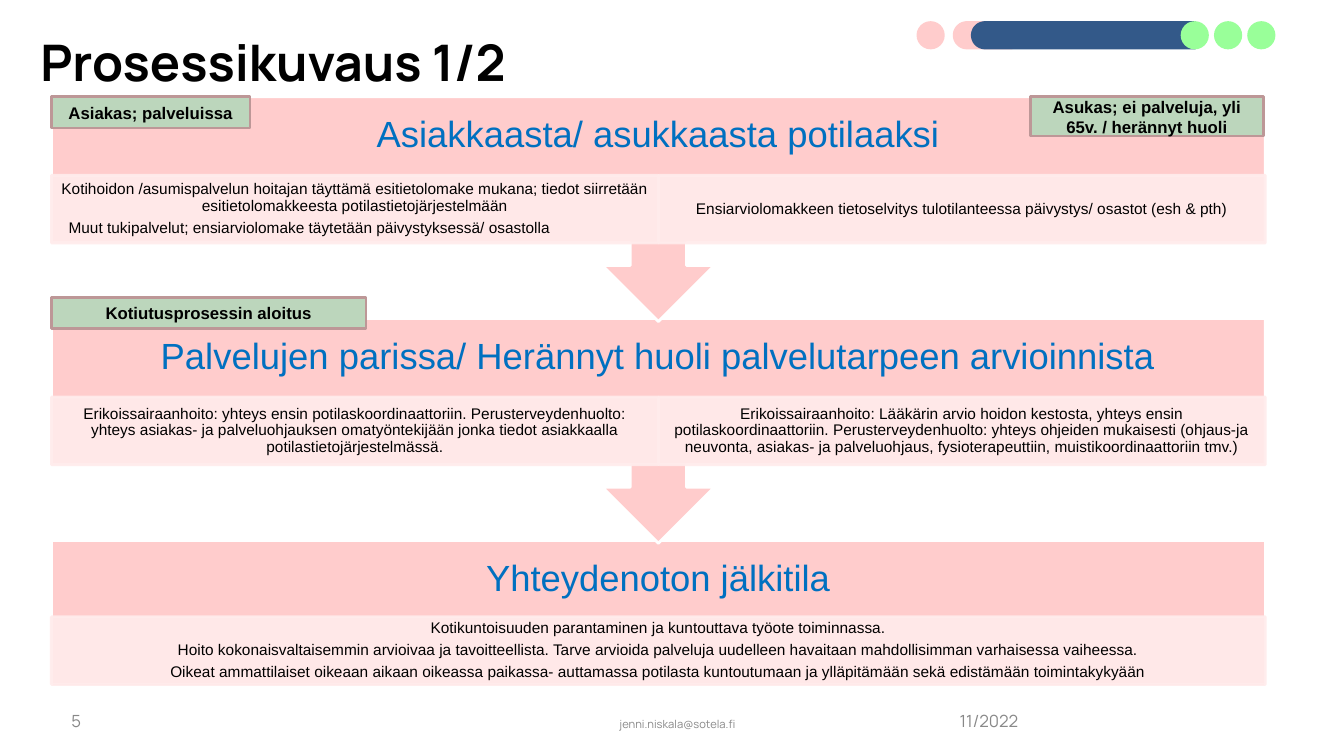
from math import cos, pi, sin

from lxml.etree import SubElement
from pptx import Presentation
from pptx.dml.color import RGBColor
from pptx.enum.shapes import MSO_SHAPE as SHAPE
from pptx.enum.text import MSO_ANCHOR as ANCHOR, PP_ALIGN as ALIGN
from pptx.oxml.ns import qn
from pptx.util import Inches, Pt

PINK = RGBColor(0xFF, 0xCC, 0xCC)
PALE = RGBColor(0xFF, 0xEC, 0xEC)
NAVY = RGBColor(0x33, 0x59, 0x89)
LIME = RGBColor(0x99, 0xFF, 0x99)
SAGE = RGBColor(0xBC, 0xD6, 0xBC)
MAUVE = RGBColor(0xBD, 0x97, 0x97)
BLUE = RGBColor(0x00, 0x70, 0xC0)
GREY = RGBColor(0x88, 0x88, 0x88)
BLACK = RGBColor(0, 0, 0)
WHITE = RGBColor(0xFF, 0xFF, 0xFF)

# Grid of the process, in inches
LEFT, WIDTH = 0.51, 12.04
TOP, STEP = 0.96, 2.2
HEADING_H, DETAIL_H = 0.78, 0.67
CALLOUT_H, LAST_H = 2.23, 1.45
DOT, DOT_TOP = 0.28, 0.21

# Heading, detail cells (paragraphs), offset of the cells from the heading's top
STAGES = [
    ("Asiakkaasta/ asukkaasta potilaaksi",
     [["Kotihoidon /asumispalvelun hoitajan täyttämä esitietolomake mukana; tiedot siirretään "
       "esitietolomakkeesta potilastietojärjestelmään",
       "Muut tukipalvelut; ensiarviolomake täytetään päivystyksessä/ osastolla"],
      ["Ensiarviolomakkeen tietoselvitys tulotilanteessa päivystys/ osastot (esh & pth)"]], 0.78),
    ("Palvelujen parissa/ Herännyt huoli palvelutarpeen arvioinnista",
     [["Erikoissairaanhoito: yhteys ensin potilaskoordinaattoriin. Perusterveydenhuolto: yhteys "
       "asiakas- ja palveluohjauksen omatyöntekijään jonka tiedot asiakkaalla "
       "potilastietojärjestelmässä."],
      ["Erikoissairaanhoito: Lääkärin arvio hoidon kestosta, yhteys ensin "
       "potilaskoordinaattoriin. Perusterveydenhuolto: yhteys ohjeiden mukaisesti (ohjaus-ja "
       "neuvonta, asiakas- ja palveluohjaus, fysioterapeuttiin, muistikoordinaattoriin tmv.)"]],
     0.78),
    ("Yhteydenoton jälkitila",
     [["Kotikuntoisuuden parantaminen ja kuntouttava työote toiminnassa.",
       "Hoito kokonaisvaltaisemmin arvioivaa ja tavoitteellista. Tarve arvioida palveluja "
       "uudelleen havaitaan mahdollisimman varhaisessa vaiheessa.",
       "Oikeat ammattilaiset oikeaan aikaan oikeassa paikassa- auttamassa potilasta kuntoutumaan "
       "ja ylläpitämään sekä edistämään toimintakykyään"]], 0.76),
]
LABELS = [
    ("Kotiutusprosessin aloitus", LEFT, 2.95, 3.12, 0.31),
    ("Asiakas; palveluissa", LEFT, TOP, 1.97, 0.31),
    ("Asukas; ei palveluja, yli 65v. / herännyt huoli", 10.22, TOP, 2.31, 0.39),
]


def box(x, y, w, h):
    return [Inches(v) for v in (x, y, w, h)]


def paint(sp, fill, line=None, opacity=None):
    sp.shadow.inherit = False
    sp.fill.solid()
    sp.fill.fore_color.rgb = fill
    if line is None:
        sp.line.fill.background()
    else:
        sp.line.color.rgb = line
        sp.line.width = Pt(2)
    if opacity:
        for clr in sp._element.spPr.iter(qn("a:srgbClr")):
            SubElement(clr, qn("a:alpha"), val=str(opacity * 1000))


def write(sp, paragraphs, size=12, color=BLACK, font="Arial", bold=False, align=ALIGN.CENTER,
          anchor=ANCHOR.MIDDLE, inset=(0.1, 0.05), spacing=None, after=0):
    tf = sp.text_frame
    tf.word_wrap = True
    tf.vertical_anchor = anchor
    tf.margin_left = tf.margin_right = Inches(inset[0])
    tf.margin_top = tf.margin_bottom = Inches(inset[1])
    for i, text in enumerate(paragraphs):
        p = tf.add_paragraph() if i else tf.paragraphs[0]
        p.alignment = align
        p.line_spacing = spacing
        p.space_before, p.space_after = Pt(0), Pt(after)
        r = p.add_run()
        r.text = text
        r.font.name, r.font.size, r.font.bold = font, Pt(size), bold
        r.font.color.rgb = color


def add_rect(s, x, y, w, h, fill, line, opacity=None, shape=SHAPE.RECTANGLE):
    sp = s.shapes.add_shape(shape, *box(x, y, w, h))
    paint(sp, fill, line, opacity)
    return sp


def add_text(s, text, x, y, w, h, **fmt):
    write(s.shapes.add_textbox(*box(x, y, w, h)), [text], **fmt)


def add_dot(s, x, fill):
    add_rect(s, x, DOT_TOP, DOT, DOT, fill, None, shape=SHAPE.OVAL)


def add_bar(s, left, right, fill):
    """Bar with a round left end and a square right end."""
    radius, steps = DOT / 2, 24
    angles = [pi / 2 + pi * i / steps for i in range(steps + 1)]
    arc = [(left + radius + radius * cos(a), DOT_TOP + radius - radius * sin(a)) for a in angles]
    corners = [(right, DOT_TOP + DOT), (right, DOT_TOP)]
    points = [(Inches(x), Inches(y)) for x, y in arc + corners]
    builder = s.shapes.build_freeform(*points[0])
    builder.add_line_segments(points[1:], close=True)
    paint(builder.convert_to_shape(), fill)


def add_stage(s, top, heading, cells, offset, last):
    if last:
        add_rect(s, LEFT, top, WIDTH, LAST_H, PINK, WHITE)
    else:
        callout = add_rect(s, LEFT, top, WIDTH, CALLOUT_H, PINK, WHITE,
                           shape=SHAPE.UP_ARROW_CALLOUT)
        callout.rotation = 180
    add_text(s, heading, LEFT, top, WIDTH, HEADING_H, size=26, color=BLUE,
             inset=(0.2, 0.2), spacing=0.9)
    w = WIDTH / len(cells)
    for i, paragraphs in enumerate(cells):
        cell = add_rect(s, LEFT + i * w, top + offset, w, DETAIL_H, PALE, PALE, opacity=90)
        write(cell, paragraphs, size=11, inset=(0.09, 0.02), spacing=0.9, after=4)
        if len(cells) > 1 and len(paragraphs) > 1:
            p = cell.text_frame.paragraphs[-1]
            p.alignment = ALIGN.LEFT
            p._p.get_or_add_pPr().set("marL", str(Inches(0.08)))


def main():
    prs = Presentation()
    prs.slide_width, prs.slide_height = Inches(13.33), Inches(7.5)
    s = prs.slides.add_slide(prs.slide_layouts[5])

    # Corner decoration
    add_bar(s, 9.45, 10.04, PINK)
    add_bar(s, 9.63, 11.86, NAVY)
    for x, fill in [(11.71, LIME), (12.04, LIME), (12.37, LIME), (9.09, PINK)]:
        add_dot(s, x, fill)

    # Title
    title = s.shapes.title
    title.left, title.top, title.width, title.height = box(0.3, 0.19, WIDTH, 0.78)
    write(title, ["Prosessikuvaus 1/2"], size=36, font="Manrope", bold=True,
          align=ALIGN.LEFT, anchor=ANCHOR.BOTTOM, spacing=0.9)

    # Stages, the last one first so that each arrow lies over the next stage
    for i, stage in reversed(list(enumerate(STAGES))):
        add_stage(s, TOP + i * STEP, *stage, last=i == len(STAGES) - 1)

    # Labels
    for text, *place in LABELS:
        write(add_rect(s, *place, SAGE, MAUVE), [text], bold=True)

    # Footer
    footer = dict(font="Manrope", color=GREY)
    add_text(s, "11/2022", 9.42, 6.95, 3, 0.4, align=ALIGN.LEFT, **footer)
    add_text(s, "jenni.niskala@sotela.fi", 4.47, 6.98, 4.5, 0.4, size=8, **footer)
    add_text(s, "5", 0.61, 6.95, 3, 0.4, align=ALIGN.LEFT, **footer)

    prs.save("out.pptx")


if __name__ == "__main__":
    main()
